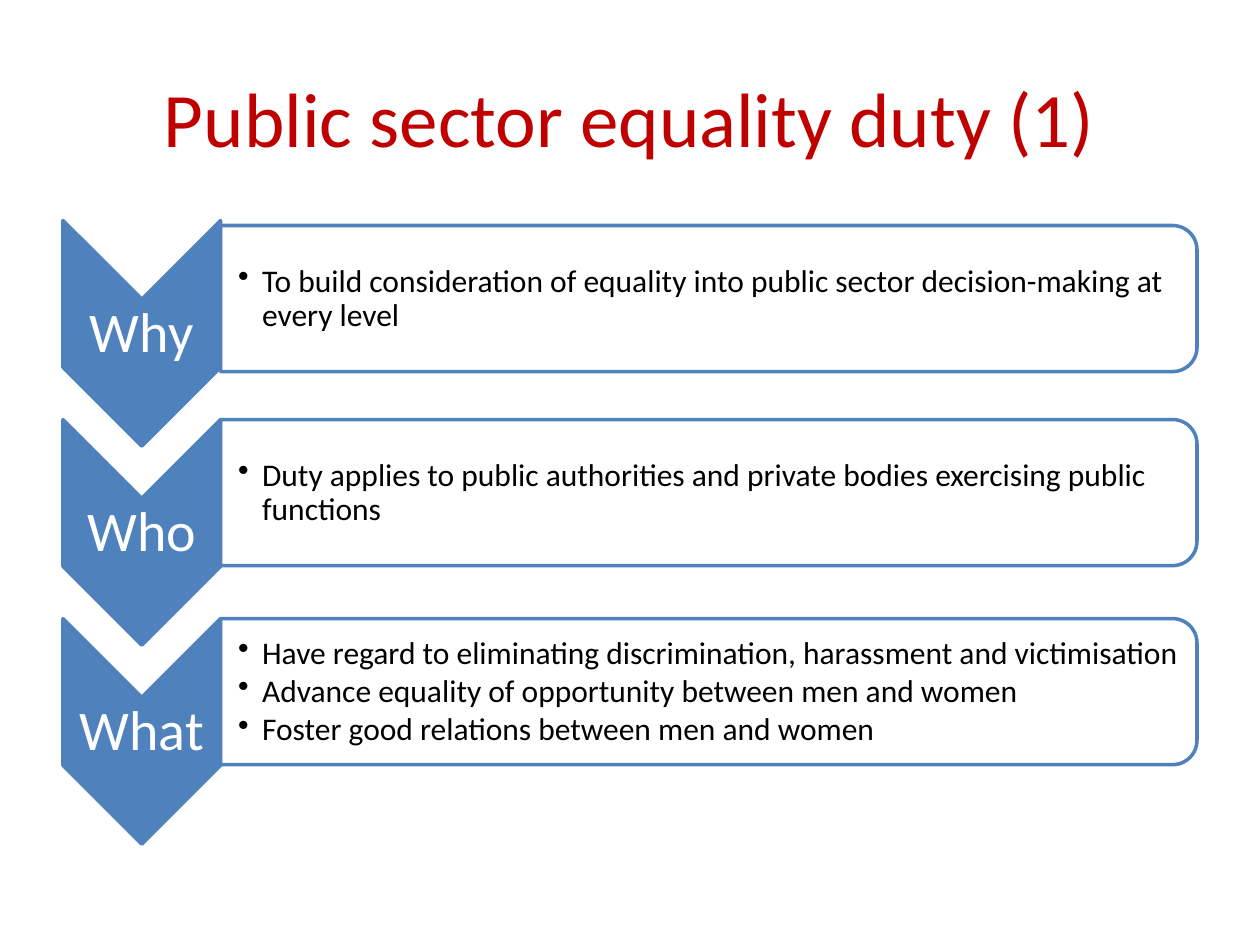
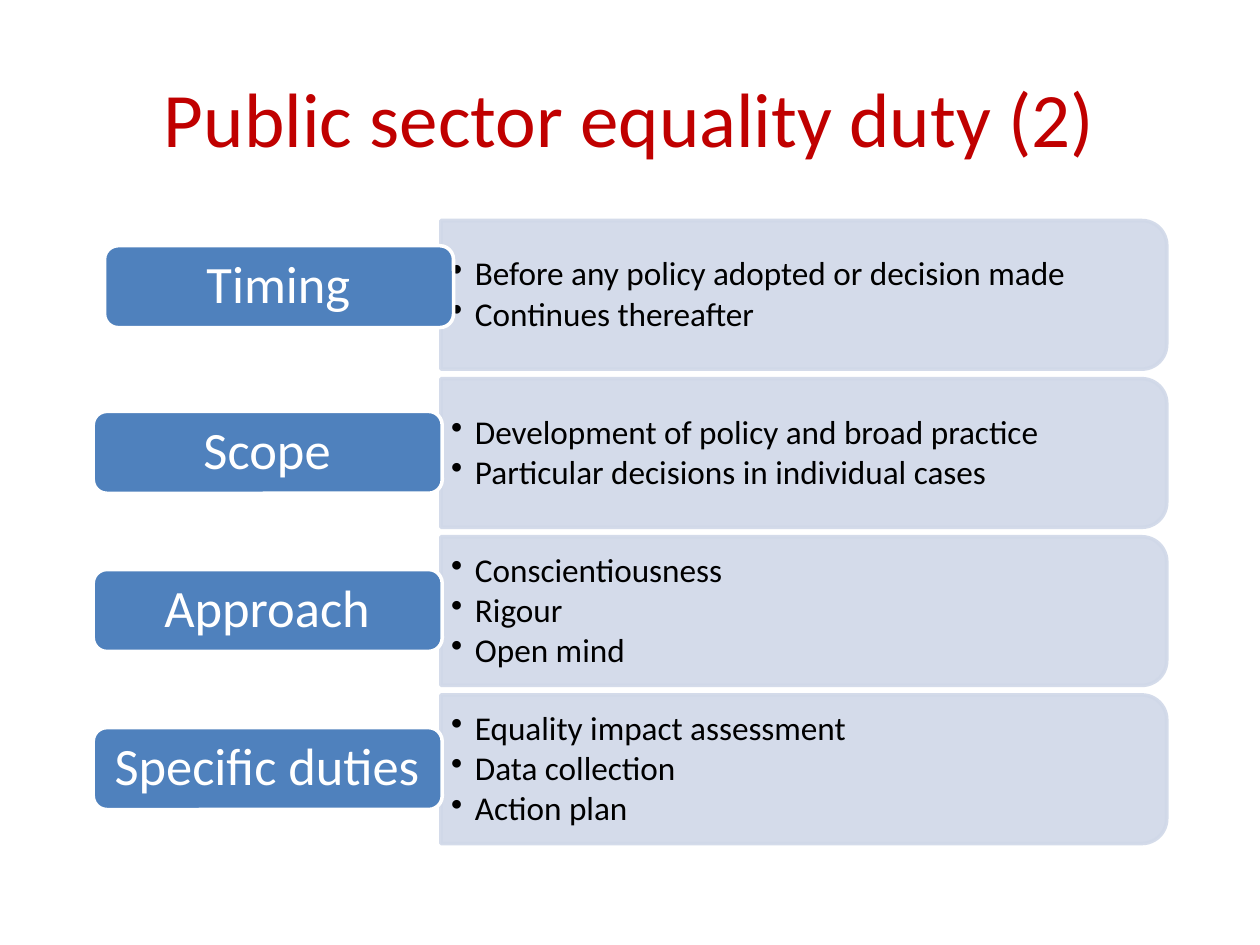
from dataclasses import dataclass

from lxml import etree
from pptx import Presentation
from pptx import util as u
from pptx.dml.color import RGBColor
from pptx.enum import shapes, text
from pptx.oxml import ns

FONT = "Calibri"
RED = RGBColor(0xC0, 0x00, 0x00)
BLUE = RGBColor(0x4F, 0x81, 0xBD)
PALE_BLUE = RGBColor(0xD0, 0xD8, 0xE8)
WHITE = RGBColor(0xFF, 0xFF, 0xFF)
BLACK = RGBColor(0x00, 0x00, 0x00)

PANEL_OPACITY = 90
LINE_SPACING = 0.9
BULLET_INDENT = u.Inches(0.19)


@dataclass(frozen=True)
class Frame:
    """A visible area, in inches."""
    left: float
    top: float
    width: float
    height: float


@dataclass(frozen=True)
class TextStyle:
    size: float
    color: RGBColor
    margins: tuple[float, float] = (0.1, 0.05)  # left, and the other sides
    bulleted: bool = False
    line_spacing: float = LINE_SPACING
    gap: float = 0  # space after, as a share of the line


@dataclass(frozen=True)
class Topic:
    label: str
    points: tuple[str, ...]
    panel_top: float


TITLE = TextStyle(44, RED, line_spacing=1)
CHEVRON_LABEL = TextStyle(32, WHITE, (0.02, 0.02), gap=0.35)
CHEVRON_POINTS = TextStyle(18, BLACK, (0.14, 0.01), bulleted=True, gap=0.15)
TAB_LABEL = TextStyle(30, WHITE, (0.12, 0.06), gap=0.35)
TAB_POINTS = TextStyle(19, BLACK, (0.08, 0.04), bulleted=True, gap=0.15)

DUTY = (
    Topic("Why", ("To build consideration of equality into public sector "
                  "decision-making at every level",), 1.79),
    Topic("Who", ("Duty applies to public authorities and private bodies "
                  "exercising public functions",), 3.33),
    Topic("What", ("Have regard to eliminating discrimination, harassment and victimisation",
                   "Advance equality of opportunity between men and women",
                   "Foster good relations between men and women"), 4.91),
)
PRACTICE_TOP, PRACTICE_PITCH = 1.75, 1.255
PRACTICE = tuple(
    Topic(label, points, PRACTICE_TOP + row * PRACTICE_PITCH)
    for row, (label, points) in enumerate((
        ("Timing", ("Before any policy adopted or decision made", "Continues thereafter")),
        ("Scope", ("Development of policy and broad practice",
                   "Particular decisions in individual cases")),
        ("Approach", ("Conscientiousness", "Rigour", "Open mind")),
        ("Specific duties", ("Equality impact assessment", "Data collection", "Action plan")),
    ))
)


def set_opacity(color_format, percent: int) -> None:
    """Add an alpha value to a solid fill."""
    color = color_format._xPr.find(ns.qn("a:solidFill"))[0]
    etree.SubElement(color, ns.qn("a:alpha"), val=str(percent * 1000))


def add_bullet(para) -> None:
    properties = para._p.get_or_add_pPr()
    properties.set("marL", str(BULLET_INDENT))
    properties.set("indent", str(-BULLET_INDENT))
    etree.SubElement(properties, ns.qn("a:buChar"), char="•")


def add_text(page, frame: Frame, lines: tuple[str, ...], style: TextStyle) -> None:
    box = page.shapes.add_textbox(*map(u.Inches, (
        frame.left, frame.top, frame.width, frame.height)))
    body = box.text_frame
    body.word_wrap = True
    body.vertical_anchor = text.MSO_ANCHOR.MIDDLE
    left, other = map(u.Inches, style.margins)
    body.margin_left = left
    body.margin_top = body.margin_bottom = other
    body.margin_right = other if style is CHEVRON_POINTS else left
    for index, line in enumerate(lines):
        para = body.paragraphs[0] if index == 0 else body.add_paragraph()
        para.text = line
        para.font.name = FONT
        para.font.size = u.Pt(style.size)
        para.font.color.rgb = style.color
        para.line_spacing = style.line_spacing
        para.space_after = u.Pt(style.size * style.line_spacing * style.gap)
        if style.bulleted:
            para.level = 1
            add_bullet(para)
        else:
            para.alignment = text.PP_ALIGN.CENTER


def add_block(page, kind: shapes.MSO_SHAPE, frame: Frame, fill: RGBColor,
              line: RGBColor, turned: bool = False):
    """Draw a preset shape; a turned one fills the frame after a quarter turn."""
    left, top, width, height = frame.left, frame.top, frame.width, frame.height
    if turned:
        left += (width - height) / 2
        top -= (width - height) / 2
        width, height = height, width
    block = page.shapes.add_shape(kind, *map(u.Inches, (left, top, width, height)))
    block.rotation = 90 if turned else 0
    block.shadow.inherit = False
    block.fill.solid()
    block.fill.fore_color.rgb = fill
    block.line.color.rgb = line
    block.line.width = u.Pt(2)
    return block


def add_panel(page, frame: Frame, fill: RGBColor, line: RGBColor):
    panel = add_block(page, shapes.MSO_SHAPE.ROUND_2_SAME_RECTANGLE, frame, fill, line, True)
    set_opacity(panel.fill, PANEL_OPACITY)
    return panel


def add_titled_page(deck, title: str):
    page = deck.slides.add_slide(deck.slide_layouts[6])
    add_text(page, Frame(0.5, 0.3, 9, 1.25), (title,), TITLE)
    return page


def build_duty(deck) -> None:
    """Chevrons pointing down, each with an outlined panel."""
    page = add_titled_page(deck, "Public sector equality duty (1)")
    for row, topic in enumerate(DUTY):
        top = 1.75 + row * 1.58
        add_block(page, shapes.MSO_SHAPE.CHEVRON, Frame(0.5, top, 1.25, 1.79),
                  BLUE, BLUE, turned=True)
        add_text(page, Frame(0.5, top + 0.63, 1.25, 0.54), (topic.label,), CHEVRON_LABEL)
        add_panel(page, Frame(1.75, topic.panel_top, 7.75, 1.16), WHITE, BLUE)
        add_text(page, Frame(1.75, topic.panel_top + 0.06, 7.69, 1.05),
                 topic.points, CHEVRON_POINTS)


def build_practice(deck) -> None:
    """Tinted panels, each with a rounded tab on its left."""
    page = add_titled_page(deck, "Public sector equality duty (2)")
    for row, topic in enumerate(PRACTICE):
        top = topic.panel_top
        panel = add_panel(page, Frame(3.5, top, 5.76, 1.18), PALE_BLUE, PALE_BLUE)
        set_opacity(panel.line.fill, PANEL_OPACITY)
        add_text(page, Frame(3.5, top + 0.06, 5.7, 1.07), topic.points, TAB_POINTS)
        # The first tab sits slightly off the column
        left, drop = (0.83, 0.2) if row == 0 else (0.74, 0.26)
        add_block(page, shapes.MSO_SHAPE.ROUNDED_RECTANGLE,
                  Frame(left, top + drop, 2.77, 0.65), BLUE, WHITE)
        add_text(page, Frame(left + 0.03, top + drop + 0.03, 2.7, 0.59),
                 (topic.label,), TAB_LABEL)


def main() -> None:
    deck = Presentation()
    deck.slide_width, deck.slide_height = u.Inches(10), u.Inches(7.5)
    build_duty(deck)
    build_practice(deck)
    deck.save("out.pptx")


if __name__ == "__main__":
    main()
